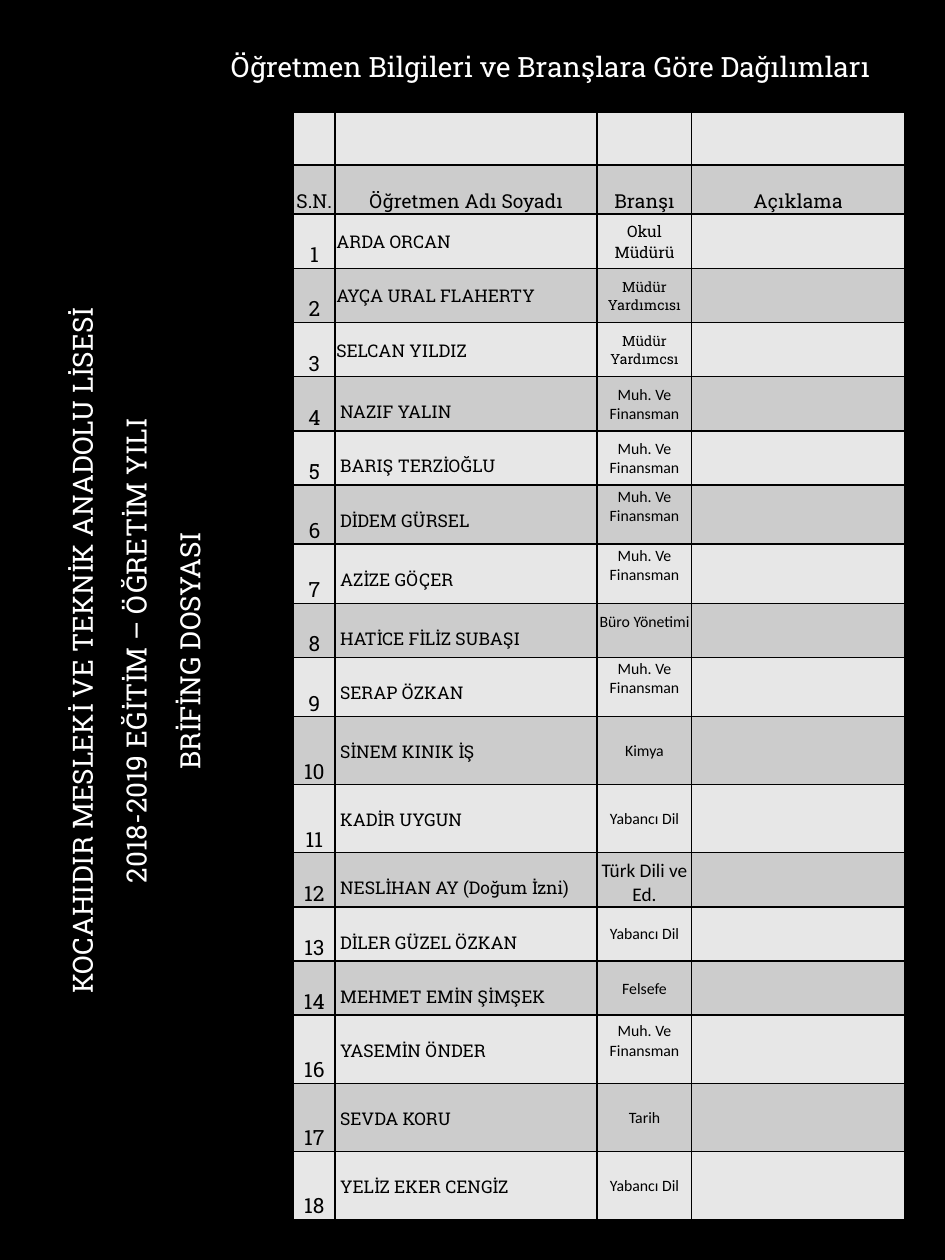
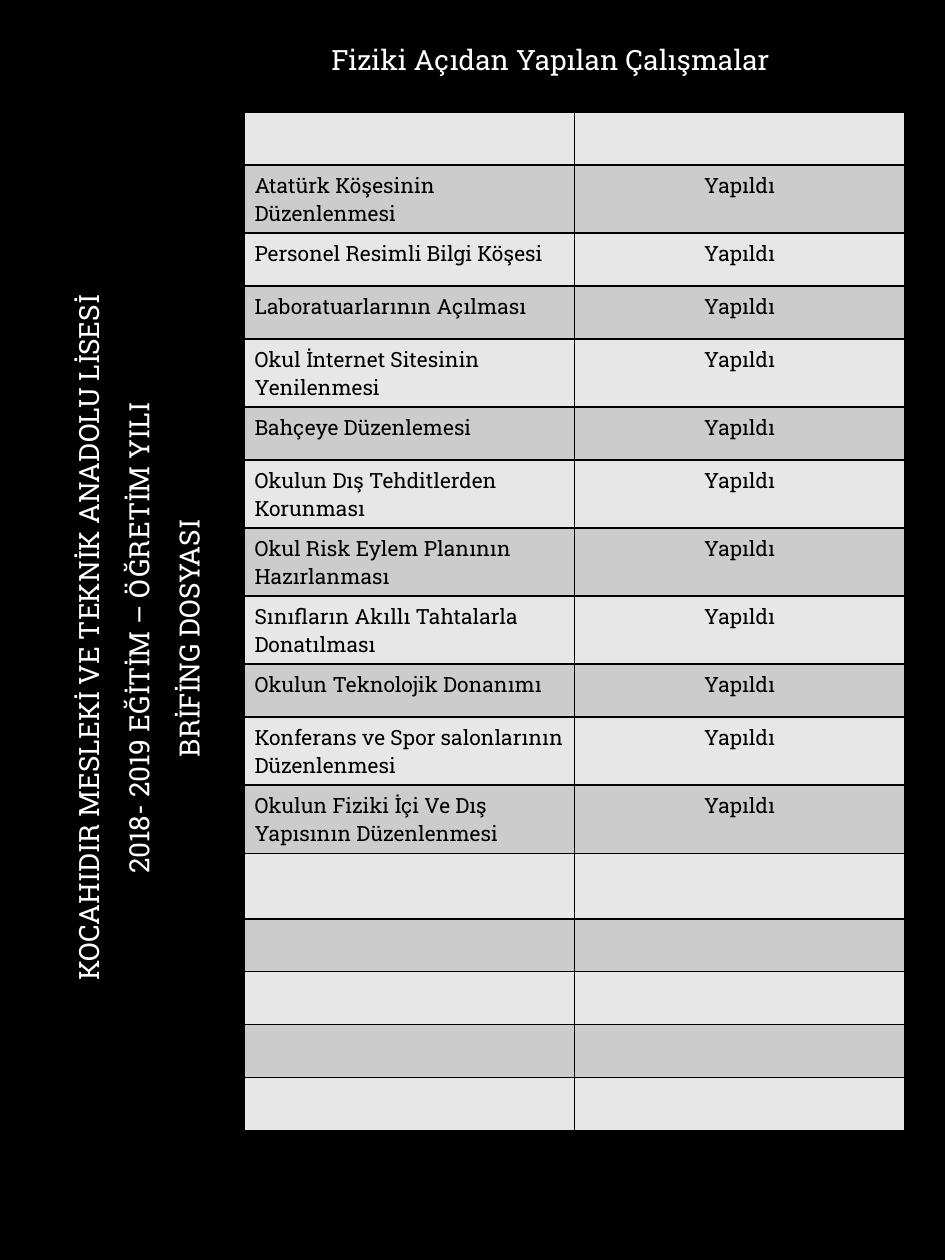
"""Build two briefing pages: the teacher list and the works done on the school building."""
from lxml.etree import SubElement
from pptx import Presentation
from pptx.dml.color import RGBColor
from pptx.enum.text import MSO_ANCHOR as Anchor, MSO_AUTO_SIZE as AutoSize, PP_ALIGN as Align
from pptx.oxml.ns import qn
from pptx.util import Inches, Pt

THEME = {
    "background": RGBColor.from_string("000000"),
    "light_text": RGBColor.from_string("FFFFFF"),
    "dark_text": RGBColor.from_string("000000"),
    "bands": [RGBColor.from_string("E7E7E7"), RGBColor.from_string("CCCCCC")],
    "border": "000000",
    "slab": "Roboto Slab",
    "sans": "Calibri",
    "heading": 16, "number": 12, "work": 12, "label": 11, "name": 10, "branch": 9, "deputy": 8,
}


def cell_style(size, font="slab", align=Align.CENTER, anchor=Anchor.MIDDLE, margins=(0.01, 0.01, 0)):
    """Return the format values of a table cell; margins are side, top and bottom."""
    side, top, bottom = margins
    return {
        "frame": {"margin_left": Inches(side), "margin_right": Inches(side),
                  "margin_top": Inches(top), "margin_bottom": Inches(bottom),
                  "vertical_anchor": anchor},
        "paragraph": {"alignment": align},
        "font": {"size": Pt(THEME[size]), "name": THEME[font], "bold": False},
        "color": THEME["dark_text"],
    }


def write_lines(holder, text_frame, lines, style):
    """Fill a text frame with paragraphs and apply the format values."""
    for name, value in style["frame"].items():
        setattr(holder, name, value)
    for index, line in enumerate(lines):
        paragraph = text_frame.add_paragraph() if index else text_frame.paragraphs[0]
        run = paragraph.add_run()
        run.text = line
        for name, value in style["paragraph"].items():
            setattr(paragraph, name, value)
        for name, value in style["font"].items():
            setattr(run.font, name, value)
        run.font.color.rgb = style["color"]


WORK_MARGINS = (0.08, 0.05, 0.05)
STYLES = {
    "header": cell_style("label", anchor=Anchor.BOTTOM),
    "number": cell_style("number", anchor=Anchor.BOTTOM),
    "manager": cell_style("name", align=Align.LEFT),
    "teacher": cell_style("name", align=Align.LEFT, anchor=Anchor.TOP, margins=(0.04, 0.19, 0)),
    "head": cell_style("branch"),
    "deputy": cell_style("deputy"),
    "branch": cell_style("branch", "sans"),
    "raised": cell_style("branch", "sans", margins=(0.01, 0.01, 0.14)),
    "large": cell_style("label", "sans", anchor=Anchor.BOTTOM),
    "work": cell_style("work", align=Align.LEFT, anchor=Anchor.TOP, margins=WORK_MARGINS),
    "status": cell_style("work", anchor=Anchor.TOP, margins=WORK_MARGINS),
}

teachers = [
    ("1", "ARDA ORCAN", "manager", "Okul Müdürü", "head", 0.43),
    ("2", "AYÇA URAL FLAHERTY", "manager", "Müdür Yardımcısı", "deputy", 0.43),
    ("3", "SELCAN YILDIZ", "manager", "Müdür Yardımcsı", "deputy", 0.43),
    ("4", "NAZIF YALIN", "teacher", "Muh. Ve Finansman", "branch", 0.43),
    ("5", "BARIŞ TERZİOĞLU", "teacher", "Muh. Ve Finansman", "branch", 0.43),
    ("6", "DİDEM GÜRSEL", "teacher", "Muh. Ve Finansman", "raised", 0.47),
    ("7", "AZİZE GÖÇER", "teacher", "Muh. Ve Finansman", "raised", 0.47),
    ("8", "HATİCE FİLİZ SUBAŞI", "teacher", "Büro Yönetimi", "raised", 0.43),
    ("9", "SERAP ÖZKAN", "teacher", "Muh. Ve Finansman", "raised", 0.47),
    ("10", "SİNEM KINIK İŞ", "teacher", "Kimya", "branch", 0.54),
    ("11", "KADİR UYGUN", "teacher", "Yabancı Dil", "branch", 0.54),
    ("12", "NESLİHAN AY (Doğum İzni)", "teacher", "Türk Dili ve Ed.", "large", 0.43),
    ("13", "DİLER GÜZEL ÖZKAN", "teacher", "Yabancı Dil", "branch", 0.43),
    ("14", "MEHMET EMİN ŞİMŞEK", "teacher", "Felsefe", "branch", 0.43),
    ("16", "YASEMİN ÖNDER", "teacher", "Muh. Ve Finansman", "raised", 0.54),
    ("17", "SEVDA KORU", "teacher", "Tarih", "branch", 0.54),
    ("18", "YELİZ EKER CENGİZ", "teacher", "Yabancı Dil", "branch", 0.54),
]
works = [
    ("Atatürk Köşesinin Düzenlenmesi", 0.54),
    ("Personel Resimli Bilgi Köşesi", 0.42),
    ("Laboratuarlarının Açılması", 0.42),
    ("Okul İnternet Sitesinin Yenilenmesi", 0.54),
    ("Bahçeye Düzenlemesi", 0.42),
    ("Okulun Dış Tehditlerden Korunması", 0.54),
    ("Okul Risk Eylem Planının Hazırlanması", 0.54),
    ("Sınıfların Akıllı Tahtalarla Donatılması", 0.54),
    ("Okulun Teknolojik Donanımı", 0.42),
    ("Konferans ve Spor salonlarının Düzenlenmesi", 0.54),
    ("Okulun Fiziki İçi Ve Dış Yapısının Düzenlenmesi", 0.54),
]

headers = ["S.N.", "Öğretmen Adı Soyadı", "Branşı", "Açıklama"]
teacher_rows = [(0.42, []), (0.39, [(header, "header") for header in headers])]
for number, name, name_style, branch, branch_style, height in teachers:
    teacher_rows.append((height, [(number, "number"), (name, name_style), (branch, branch_style)]))

work_rows = [(0.42, [])]
for work, height in works:
    work_rows.append((height, [(work, "work"), ("Yapıldı", "status")]))
work_rows += [(height, []) for height in (0.52, 0.42, 0.42, 0.42, 0.42)]

pages = [
    {"heading": "Öğretmen Bilgileri ve Branşlara Göre Dağılımları", "heading_top": 0.1,
     "year": "2018-2019 EĞİTİM – ÖĞRETİM YILI",
     "side_box": (-2.88, 4.43, 8.16, 1.47), "side_top": 0.05, "side_gap": 11.5,
     "table_left": 2.33, "columns": [0.33, 2.08, 0.75, 1.69], "rows": teacher_rows},
    {"heading": "Fiziki Açıdan Yapılan Çalışmalar", "heading_top": 0.05,
     "year": "2018- 2019 EĞİTİM – ÖĞRETİM YILI",
     "side_box": (-2.98, 4.33, 8.36, 1.47), "side_top": 0.1, "side_gap": 9.5,
     "table_left": 1.94, "columns": [2.62, 2.62], "rows": work_rows},
]

presentation = Presentation()
presentation.slide_width = Inches(7.5)
presentation.slide_height = Inches(10)
background = presentation.slide_master.background.fill
background.solid()
background.fore_color.rgb = THEME["background"]

for page in pages:
    slide = presentation.slides.add_slide(presentation.slide_layouts[1])
    title, sidebar = slide.placeholders

    side_lines = ["KOCAHIDIR MESLEKİ VE TEKNİK ANADOLU LİSESİ", page["year"], "BRİFİNG DOSYASI"]
    headings = [
        (title, (1.55, 0.29, 5.64, 0.38), 0, [page["heading"]], page["heading_top"], 0),
        (sidebar, page["side_box"], 270, side_lines, page["side_top"], page["side_gap"]),
    ]
    for shape, box, rotation, lines, top, gap in headings:
        shape.left, shape.top, shape.width, shape.height = map(Inches, box)
        shape.rotation = rotation
        style = {
            "frame": {"word_wrap": True, "auto_size": AutoSize.NONE, "vertical_anchor": Anchor.TOP,
                      "margin_top": Inches(top), "margin_bottom": Inches(0.05)},
            "paragraph": {"alignment": Align.CENTER, "line_spacing": 1.0,
                          "space_before": Pt(0), "space_after": Pt(gap)},
            "font": {"size": Pt(THEME["heading"]), "name": THEME["slab"], "bold": False},
            "color": THEME["light_text"],
        }
        write_lines(shape.text_frame, shape.text_frame, lines, style)
        for paragraph in shape.text_frame.paragraphs:
            properties = paragraph._p.get_or_add_pPr()
            properties.set("marL", "0")
            properties.set("indent", "0")
            SubElement(properties, qn("a:buNone"))

    rows, columns = page["rows"], page["columns"]
    table = slide.shapes.add_table(
        len(rows), len(columns), Inches(page["table_left"]), Inches(0.89),
        Inches(sum(columns)), Inches(sum(height for height, _ in rows))).table
    table.first_row = table.horz_banding = False
    for column, width in zip(table.columns, columns):
        column.width = Inches(width)
    for row_index, (height, entries) in enumerate(rows):
        row = table.rows[row_index]
        row.height = Inches(height)
        for cell in row.cells:
            properties = cell._tc.get_or_add_tcPr()
            for side in ("lnL", "lnR", "lnT", "lnB"):
                line = SubElement(properties, qn(f"a:{side}"), w=str(Pt(1)))
                line_fill = SubElement(line, qn("a:solidFill"))
                SubElement(line_fill, qn("a:srgbClr"), val=THEME["border"])
            cell.fill.solid()
            cell.fill.fore_color.rgb = THEME["bands"][row_index % 2]
        for cell, (text, style_name) in zip(row.cells, entries):
            write_lines(cell, cell.text_frame, [text], STYLES[style_name])

presentation.save("out.pptx")
